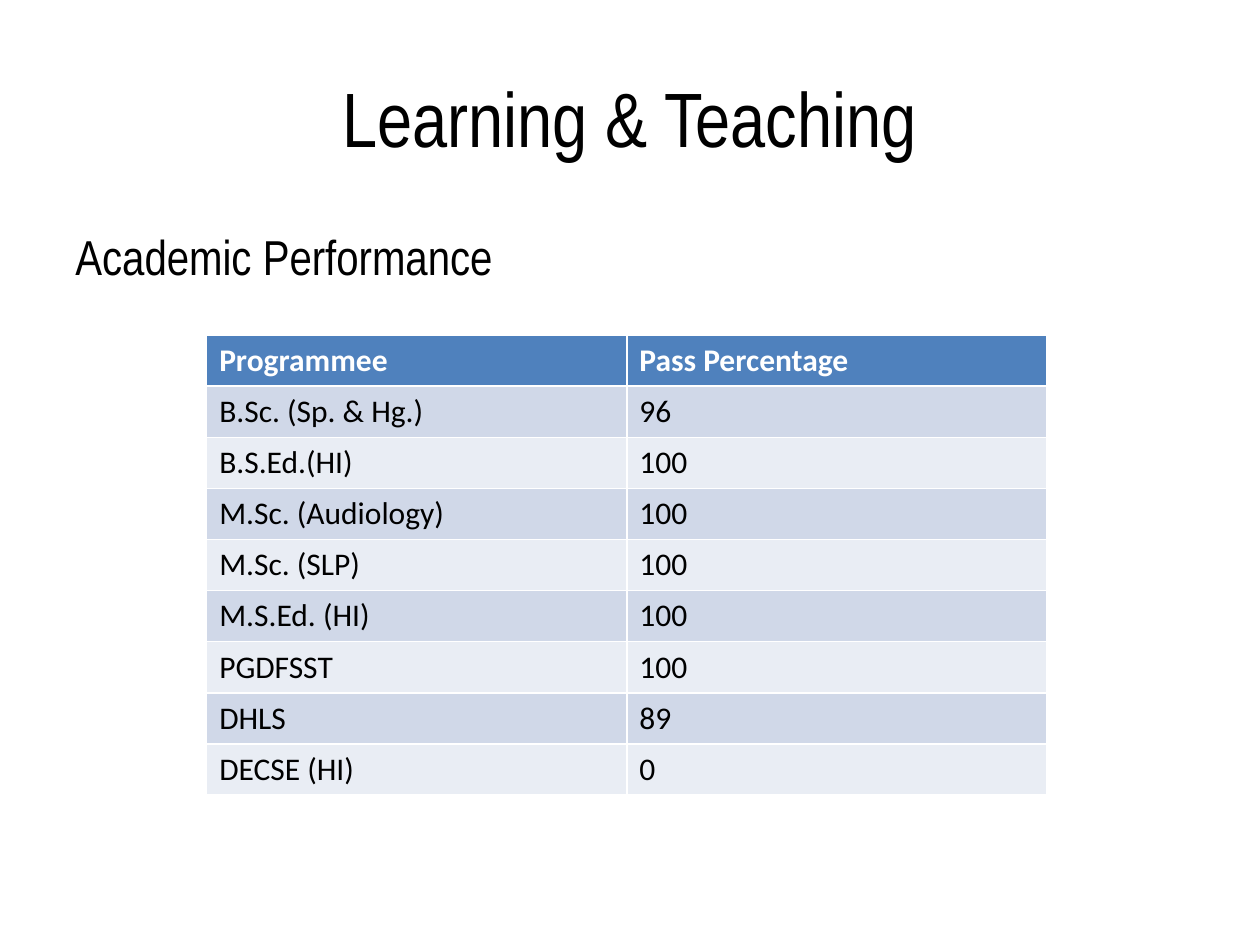
import pptx
import pptx.dml.color
import pptx.enum.text
import pptx.util

RGB = pptx.dml.color.RGBColor
BLACK = RGB(0x00, 0x00, 0x00)
WHITE = RGB(0xFF, 0xFF, 0xFF)
HEADER_BLUE = RGB(0x4F, 0x81, 0xBD)
BANDS = (RGB(0xE9, 0xED, 0xF4), RGB(0xD0, 0xD8, 0xE8))
HEADING_FONT, TABLE_FONT = "Arial Narrow", "Calibri"

RESULTS = [
    ("Programmee", "Pass Percentage"),
    ("B.Sc. (Sp. & Hg.)", "96"),
    ("B.S.Ed.(HI)", "100"),
    ("M.Sc. (Audiology)", "100"),
    ("M.Sc. (SLP)", "100"),
    ("M.S.Ed. (HI)", "100"),
    ("PGDFSST", "100"),
    ("DHLS", "89"),
    ("DECSE (HI)", "0"),
]


def inches(*lengths):
    return [pptx.util.Inches(length) for length in lengths]


def add_run(p, text, font, size, color, bold=False):
    r = p.add_run()
    r.text = text
    r.font.name = font
    r.font.size = pptx.util.Pt(size)
    r.font.bold = bold
    r.font.color.rgb = color


def place_title(s, box, text):
    sp = s.shapes.title
    sp.left, sp.top, sp.width, sp.height = inches(*box)
    tf = sp.text_frame
    tf.vertical_anchor = pptx.enum.text.MSO_ANCHOR.MIDDLE
    p = tf.paragraphs[0]
    p.alignment = pptx.enum.text.PP_ALIGN.CENTER
    add_run(p, text, HEADING_FONT, 44, BLACK)


def add_subheading(s, box, text):
    tf = s.shapes.add_textbox(*inches(*box)).text_frame
    tf.word_wrap = True
    p = tf.paragraphs[0]
    p.space_before = pptx.util.Pt(5.6)
    hanging = pptx.util.Inches(0.38)
    pPr = p._p.get_or_add_pPr()
    pPr.set("marL", str(hanging))
    pPr.set("indent", str(-hanging))
    add_run(p, text, HEADING_FONT, 28, BLACK)


def add_results_table(s, box, rows):
    """Header row and banded rows; the default table style draws the white rules."""
    table = s.shapes.add_table(len(rows), len(rows[0]), *inches(*box)).table
    for i, row in enumerate(rows):
        header = i == 0
        for j, text in enumerate(row):
            cell = table.cell(i, j)
            cell.fill.solid()
            cell.fill.fore_color.rgb = HEADER_BLUE if header else BANDS[i % 2]
            add_run(cell.text_frame.paragraphs[0], text, TABLE_FONT, 18,
                    WHITE if header else BLACK, header)


def main():
    prs = pptx.Presentation()
    prs.slide_width, prs.slide_height = inches(10, 7.5)
    s = prs.slides.add_slide(prs.slide_layouts[5])
    place_title(s, (0.5, 0.3, 9, 1.25), "Learning & Teaching")
    add_subheading(s, (0.5, 1.75, 4.03, 0.75), "Academic Performance")
    add_results_table(s, (1.64, 2.66, 6.67, 3.65), RESULTS)
    prs.save("out.pptx")


if __name__ == "__main__":
    main()
